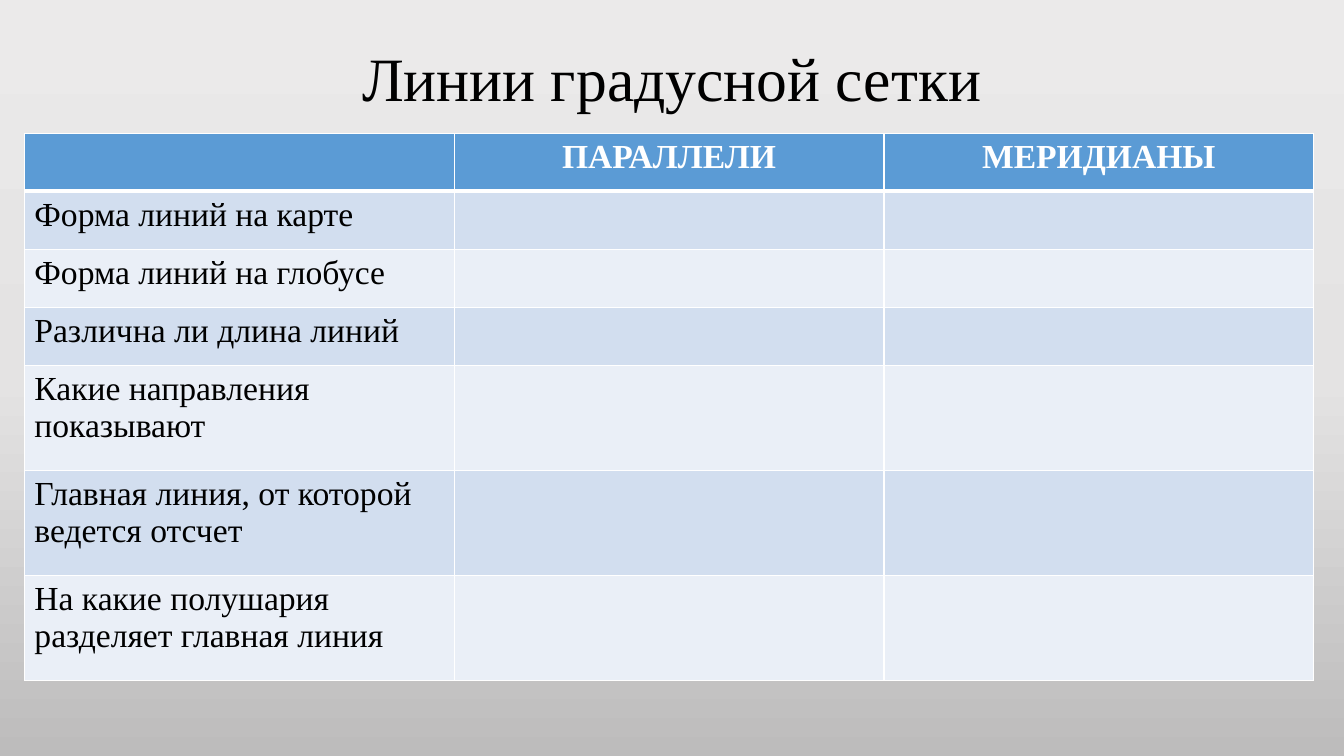
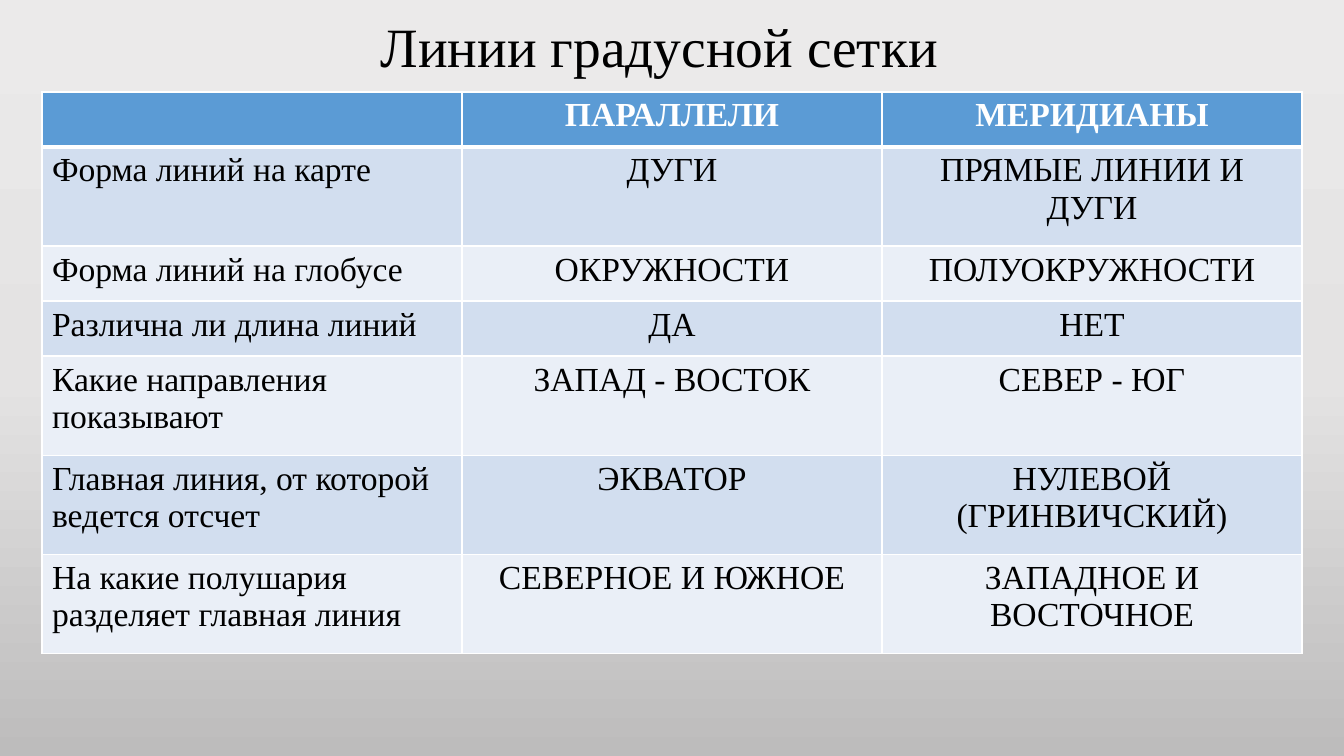
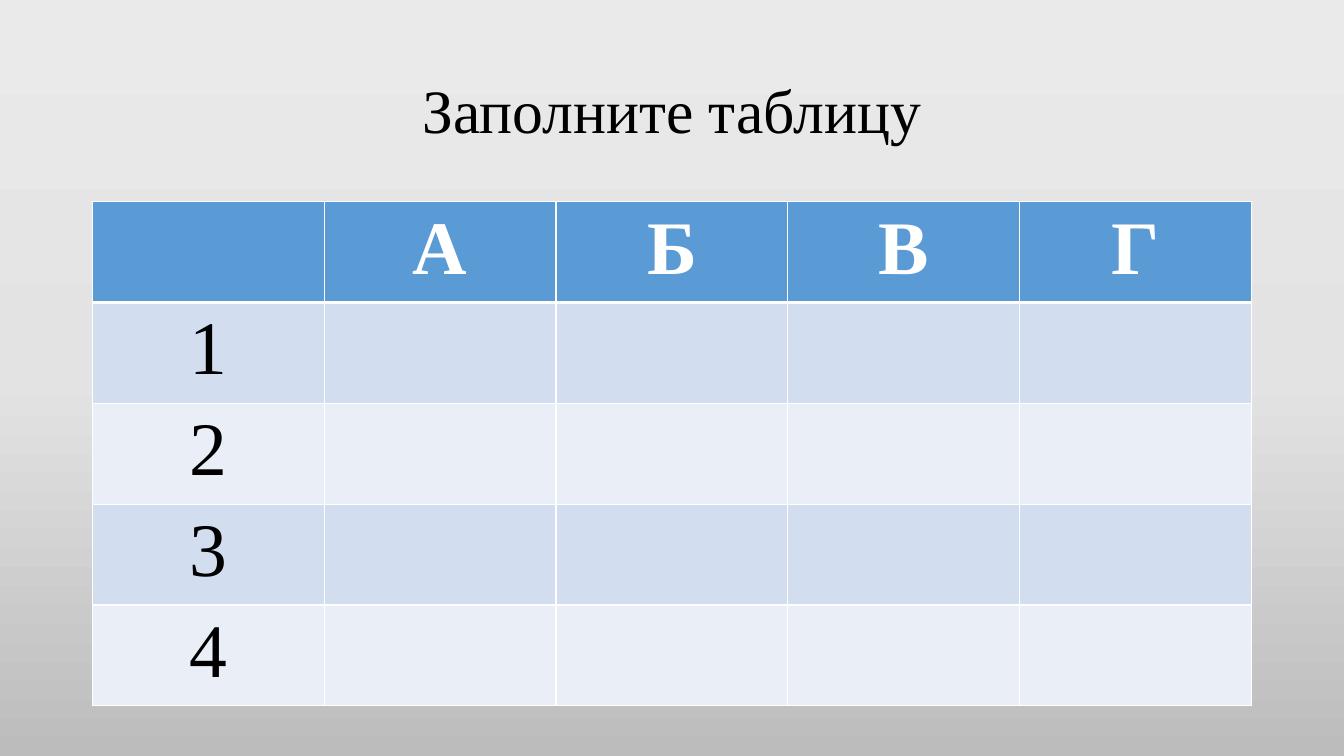
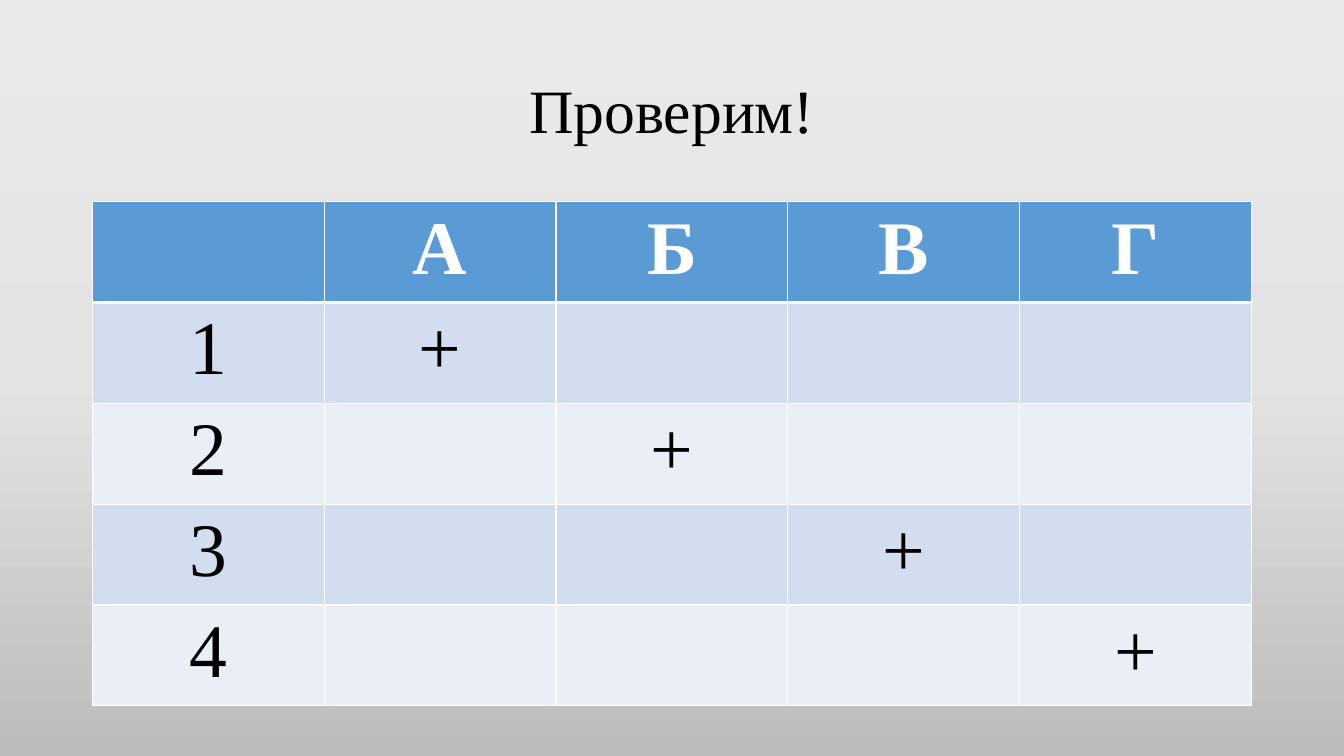
from copy import deepcopy

from lxml.etree import SubElement
from pptx import Presentation
from pptx.dml.color import RGBColor
from pptx.enum.text import MSO_ANCHOR, PP_ALIGN
from pptx.oxml.ns import qn
from pptx.util import Emu, Inches, Pt

COLUMNS, ROWS = 160, 90
UNIT = Inches(1) / 12

FONT = "Times New Roman"
BLACK = RGBColor(0x00, 0x00, 0x00)
WHITE = RGBColor(0xFF, 0xFF, 0xFF)
HEADER_BLUE = RGBColor(0x5B, 0x9B, 0xD5)
BANDS = (RGBColor(0xD2, 0xDE, 0xEF), RGBColor(0xEA, 0xEF, 0xF7))
BACKGROUND_STOPS = (
    (0, RGBColor(0xEB, 0xEA, 0xEA)),
    (0.5, RGBColor(0xE4, 0xE3, 0xE3)),
    (1, RGBColor(0xBD, 0xBC, 0xBC)),
)
THIN, THICK = Pt(1), Pt(3)

GRID_TITLE = "Линии градусной сетки"
GRID_HEADER = ("", "ПАРАЛЛЕЛИ", "МЕРИДИАНЫ")
QUESTIONS = (
    "Форма линий на карте",
    "Форма линий на глобусе",
    "Различна ли длина линий",
    "Какие направления показывают",
    "Главная линия, от которой ведется отсчет",
    "На какие полушария разделяет главная линия",
)
ANSWERS = (
    ("ДУГИ", "ПРЯМЫЕ ЛИНИИ И ДУГИ"),
    ("ОКРУЖНОСТИ", "ПОЛУОКРУЖНОСТИ"),
    ("ДА", "НЕТ"),
    ("ЗАПАД - ВОСТОК", "СЕВЕР - ЮГ"),
    ("ЭКВАТОР", "НУЛЕВОЙ (ГРИНВИЧСКИЙ)"),
    ("СЕВЕРНОЕ И ЮЖНОЕ", "ЗАПАДНОЕ И ВОСТОЧНОЕ"),
)
LETTERS = "АБВГ"


def units(count):
    return Emu(round(count * UNIT))


def set_background(master):
    fill = master.background.fill
    fill.gradient()
    fill.gradient_angle = 270
    stop_list = next(master.element.iter(qn("a:gsLst")))
    stop_list.append(deepcopy(stop_list[-1]))
    for stop, (position, color) in zip(fill.gradient_stops, BACKGROUND_STOPS):
        stop.position = position
        stop.color.rgb = color


def style_paragraph(paragraph, size, color, align, bold=False):
    paragraph.alignment = align
    font = paragraph.font
    font.name, font.size, font.bold = FONT, Pt(size), bold
    font.color.rgb = color


def add_title(slide, text, box, size=44):
    frame = slide.shapes.add_textbox(*map(units, box)).text_frame
    frame.word_wrap = True
    frame.vertical_anchor = MSO_ANCHOR.MIDDLE
    paragraph = frame.paragraphs[0]
    paragraph.text = text
    paragraph.line_spacing = 0.9
    style_paragraph(paragraph, size, BLACK, PP_ALIGN.CENTER)


def add_borders(cell, top, bottom):
    """Draw white cell borders; call before filling, as lines precede the fill."""
    properties = cell._tc.get_or_add_tcPr()
    for side, width in (("L", THIN), ("R", THIN), ("T", top), ("B", bottom)):
        line = SubElement(properties, qn(f"a:ln{side}"), w=str(width))
        fill = SubElement(line, qn("a:solidFill"))
        SubElement(fill, qn("a:srgbClr"), val=str(WHITE))


def add_table(slide, cells, left, top, width, heights, size, label_align):
    """Draw a header row and banded rows with equal columns, in grid units."""
    column_count = len(cells[0])
    box = map(units, (left, top, width, sum(heights)))
    table = slide.shapes.add_table(len(cells), column_count, *box).table
    for column in table.columns:
        column.width = units(width / column_count)
    for row_index, (texts, height) in enumerate(zip(cells, heights)):
        table.rows[row_index].height = units(height)
        header = row_index == 0
        for column_index, text in enumerate(texts):
            cell = table.cell(row_index, column_index)
            add_borders(cell, THICK if row_index == 1 else THIN, THICK if header else THIN)
            cell.fill.solid()
            cell.fill.fore_color.rgb = HEADER_BLUE if header else BANDS[(row_index - 1) % 2]
            cell.text = text
            align = PP_ALIGN.CENTER if header or column_index else label_align
            color = WHITE if header else BLACK
            style_paragraph(cell.text_frame.paragraphs[0], size, color, align, header)


def add_comparison(slide, answers, left, top, width, heights):
    cells = [GRID_HEADER] + [(question, *pair) for question, pair in zip(QUESTIONS, answers)]
    add_table(slide, cells, left, top, width, heights, 24, PP_ALIGN.LEFT)


def add_quiz(slide, title, mark):
    """Draw the letter and number table with the mark down its diagonal."""
    add_title(slide, title, (11, 4.8, 138, 17.4))
    cells = [("", *LETTERS)]
    for number in range(len(LETTERS)):
        marks = [mark if number == column else "" for column in range(len(LETTERS))]
        cells.append((str(number + 1), *marks))
    add_table(slide, cells, 11, 24, 138, [11.16] * len(cells), 54, PP_ALIGN.CENTER)


def main():
    presentation = Presentation()
    presentation.slide_width, presentation.slide_height = units(COLUMNS), units(ROWS)
    set_background(presentation.slide_master)
    blank = presentation.slide_layouts[6]
    task, solution, quiz, check = [presentation.slides.add_slide(blank) for _ in range(4)]

    add_title(task, GRID_TITLE, (11, 4.8, 138, 9.7))
    single, double = 6.92, 12.5
    add_comparison(task, [("", "")] * len(QUESTIONS), 2.9, 15.85, 153.5,
                   [single] * 4 + [double] * 3)

    add_title(solution, GRID_TITLE, (9.5, 1.4, 138, 9), 39.6)
    single, double = 6.55, 11.8
    add_comparison(solution, ANSWERS, 5, 10.95, 150,
                   [single, double, single, single] + [double] * 3)

    add_quiz(quiz, "Заполните таблицу", "")
    add_quiz(check, "Проверим!", "+")
    presentation.save("out.pptx")


if __name__ == "__main__":
    main()
